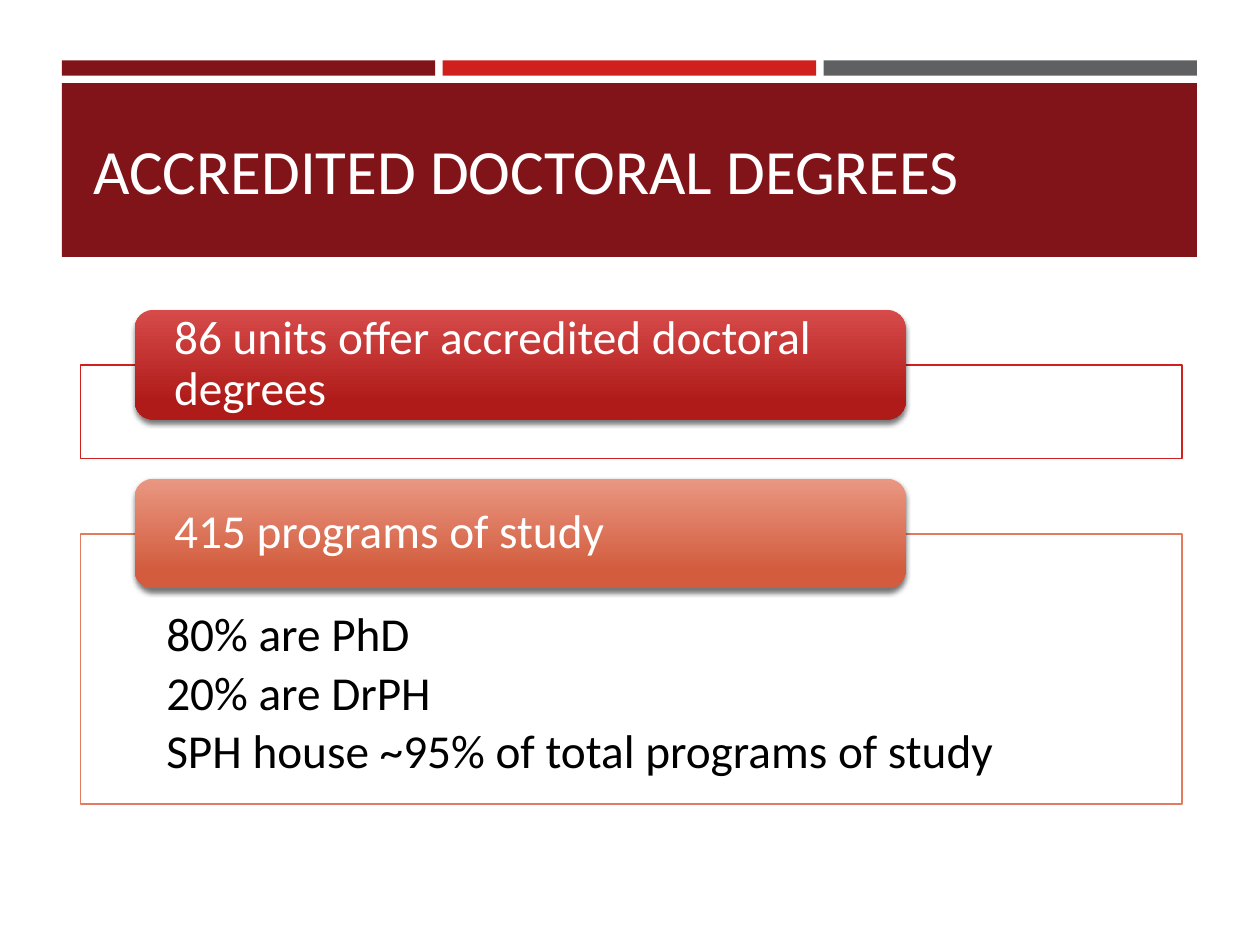
from lxml import etree
from pptx import Presentation
from pptx.dml.color import RGBColor
from pptx.enum import shapes, text
from pptx.oxml import ns
from pptx.util import Inches, Pt

FONT = "Calibri"


def rgb(value):
    return RGBColor.from_string(value)


def add_box(s, kind, x, y, w, h, fill=None, line=None):
    sp = s.shapes.add_shape(kind, Inches(x), Inches(y), Inches(w), Inches(h))
    sp.shadow.inherit = False
    if fill:
        sp.fill.solid()
        sp.fill.fore_color.rgb = rgb(fill)
    if line:
        sp.line.color.rgb = rgb(line)
        sp.line.width = Pt(1)
    else:
        sp.line.fill.background()
    return sp


def set_text(sp, lines, size, colour, anchor, insets=(0.1, 0.05), spacing=1.0, after=0):
    """Fill a shape with left-aligned lines; insets are (side, top) in inches."""
    tf = sp.text_frame
    tf.word_wrap = True
    tf.auto_size = text.MSO_AUTO_SIZE.NONE
    tf.vertical_anchor = anchor
    tf.margin_left = tf.margin_right = Inches(insets[0])
    tf.margin_top = Inches(insets[1])
    tf.margin_bottom = Inches(min(insets[1], 0.21))
    for i, line in enumerate(lines):
        p = tf.add_paragraph() if i else tf.paragraphs[0]
        p.alignment = text.PP_ALIGN.LEFT
        p.line_spacing = spacing
        p.space_before = Pt(0)
        p.space_after = Pt(after)
        r = p.add_run()
        r.text = line
        r.font.name = FONT
        r.font.size = Pt(size)
        r.font.color.rgb = rgb(colour)


def add_shadow(sp):
    effects = sp._element.spPr.find(ns.qn("a:effectLst"))
    shadow = etree.SubElement(effects, ns.qn("a:outerShdw"), blurRad=str(Pt(3)),
                              dist=str(Pt(2)), dir="5400000", rotWithShape="0")
    colour = etree.SubElement(shadow, ns.qn("a:srgbClr"), val="000000")
    etree.SubElement(colour, ns.qn("a:alpha"), val="55000")


def add_header(s, x, y, w, title):
    """Three coloured bars above a title band."""
    rect = shapes.MSO_SHAPE.RECTANGLE
    gap = 0.06
    bar_w = (w - 2 * gap) / 3
    for i, colour in enumerate(("811419", "D0201C", "5F6062")):
        add_box(s, rect, x + i * (bar_w + gap), y, bar_w, 0.12, colour)
    add_box(s, rect, x, y + 0.18, w, 1.38, "811419")

    sp = s.shapes.title
    s.shapes._spTree.append(sp._element)  # bring the title in front of the band
    sp.left, sp.top = Inches(x + 0.15), Inches(y + 0.27)
    sp.width, sp.height = Inches(w - 0.27), Inches(1.18)
    set_text(sp, [title], 36, "FFFFFF", text.MSO_ANCHOR.MIDDLE)


def add_section(s, x, y, w, h, heading, details, outline, gradient):
    """An outlined panel with a heading pill straddling its top edge."""
    panel = add_box(s, shapes.MSO_SHAPE.RECTANGLE, x, y, w, h, "FFFFFF", outline)
    if details:
        set_text(panel, details, 27, "000000", text.MSO_ANCHOR.TOP, (0.68, 0.61), 0.9, 4)

    pill = add_box(s, shapes.MSO_SHAPE.ROUNDED_RECTANGLE, x + 0.43, y - 0.44, w * 0.7, 0.87)
    pill.fill.gradient()
    pill.fill.gradient_angle = 270
    for stop, position, colour in zip(pill.fill.gradient_stops, (0, 0.84), gradient):
        stop.position = position
        stop.color.rgb = rgb(colour)
    add_shadow(pill)
    set_text(pill, [heading], 27, "FFFFFF", text.MSO_ANCHOR.MIDDLE, (0.27, 0), 0.9)


def main():
    prs = Presentation()
    prs.slide_width, prs.slide_height = Inches(10), Inches(7.5)
    s = prs.slides.add_slide(prs.slide_layouts[5])
    add_header(s, 0.49, 0.48, 9.01, "ACCREDITED DOCTORAL DEGREES")
    add_section(s, 0.64, 2.9, 8.74, 0.74, "86 units offer accredited doctoral degrees",
                [], "D0201C", ("D64B4A", "AF1B18"))
    add_section(s, 0.64, 4.24, 8.74, 2.14, "415 programs of study",
                ["80% are PhD", "20% are DrPH", "SPH house ~95% of total programs of study"],
                "E37B5F", ("E99782", "D25C3D"))
    prs.save("out.pptx")


if __name__ == "__main__":
    main()
